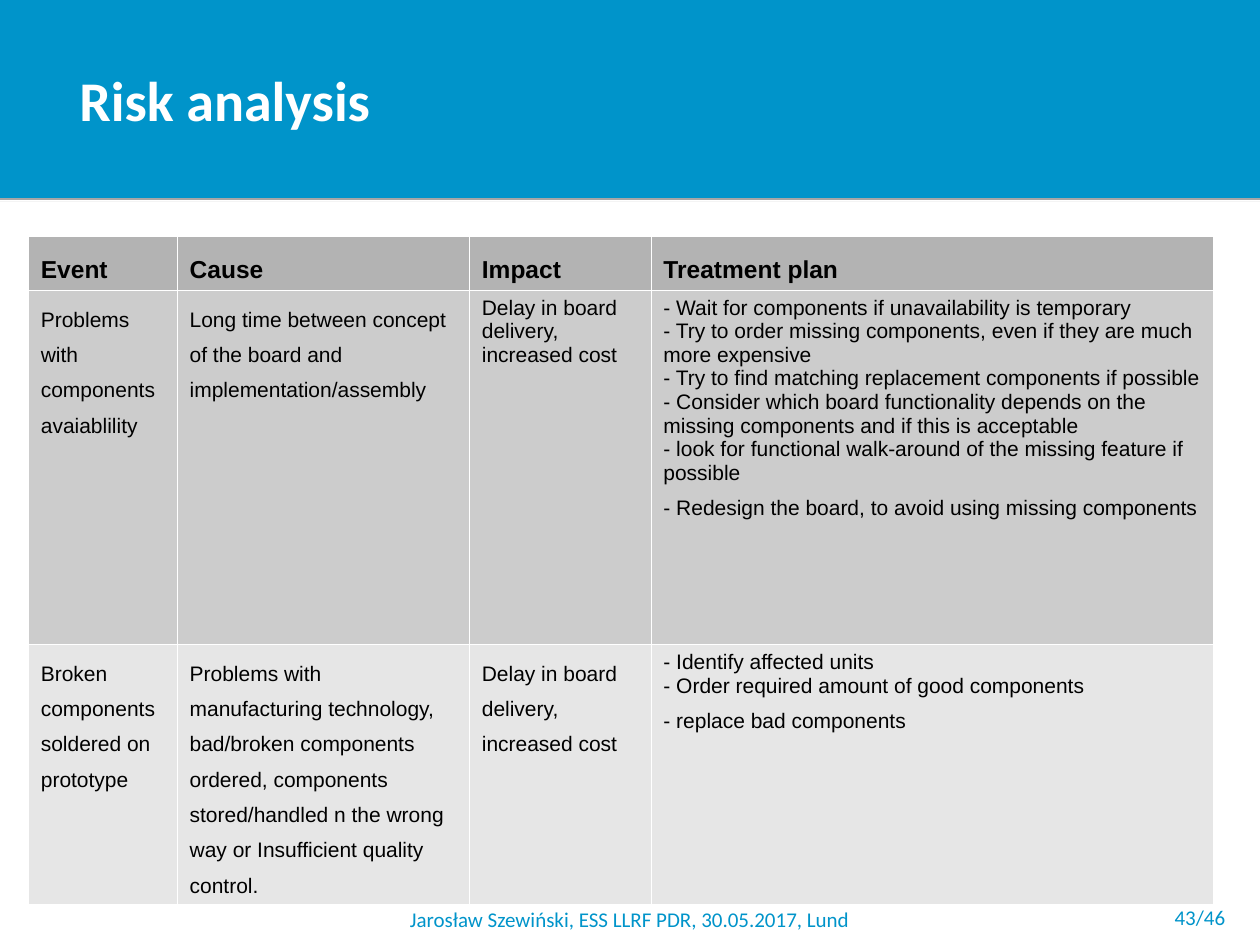
from dataclasses import dataclass

from lxml import etree
from pptx import Presentation
from pptx.dml import color
from pptx.enum import shapes, text
from pptx.oxml import ns, parse_xml
from pptx.util import Cm, Pt


@dataclass(frozen=True)
class Theme:
    accent: str = "0094CA"
    light: str = "FFFFFF"
    ink: str = "000000"
    row_fills: tuple = ("B3B3B3", "CCCCCC", "E6E6E6")
    heading_font: str = "Calibri"
    body_font: str = "Arial"
    title_size: int = 32
    header_size: int = 14
    body_size: int = 12
    border_width: float = 0.06


def rgb(value):
    return color.RGBColor.from_string(value)


class SlideBuilder:
    def __init__(self, slide, theme):
        self.slide = slide
        self.theme = theme

    def style(self, paragraph, font, size, fill, bold=False):
        for run in paragraph.runs:
            run.font.name = font
            run.font.size = Pt(size)
            run.font.bold = bold
            run.font.color.rgb = rgb(fill)

    def band(self, height):
        band = self.slide.shapes.add_shape(
            shapes.MSO_SHAPE.RECTANGLE, 0, 0, Cm(25.4), Cm(height))
        band.fill.solid()
        band.fill.fore_color.rgb = rgb(self.theme.accent)
        band.line.fill.background()
        band._element.spPr.append(parse_xml(
            f'<a:effectLst {ns.nsdecls("a")}>'
            f'<a:outerShdw blurRad="0" dist="{Pt(1.8)}" dir="5400000" rotWithShape="0">'
            f'<a:srgbClr val="{self.theme.ink}"><a:alpha val="35000"/></a:srgbClr>'
            '</a:outerShdw></a:effectLst>'))

    def rule(self, y):
        rule = self.slide.shapes.add_connector(
            shapes.MSO_CONNECTOR.STRAIGHT, 0, Cm(y), Cm(25.4), Cm(y))
        rule.line.color.rgb = rgb(self.theme.light)
        rule.line.width = Pt(0.5)
        etree.SubElement(rule._element.spPr, ns.qn("a:effectLst"))

    def title(self, wording, left, top, width, height):
        title = self.slide.shapes.title
        self.slide.shapes._spTree.append(title._element)  # in front of the band
        title.left, title.top = Cm(left), Cm(top)
        title.width, title.height = Cm(width), Cm(height)
        frame = title.text_frame
        frame.text = wording
        frame.margin_left = frame.margin_right = 0
        frame.margin_top = frame.margin_bottom = 0
        frame.vertical_anchor = text.MSO_ANCHOR.MIDDLE
        frame.paragraphs[0].alignment = text.PP_ALIGN.LEFT
        self.style(frame.paragraphs[0], self.theme.heading_font,
                   self.theme.title_size, self.theme.light, bold=True)

    def footer(self, wording, left, top, width, alignment):
        box = self.slide.shapes.add_textbox(Cm(left), Cm(top), Cm(width), Cm(0.66))
        frame = box.text_frame
        frame.word_wrap = True
        frame.text = wording
        frame.vertical_anchor = text.MSO_ANCHOR.MIDDLE
        frame.paragraphs[0].alignment = alignment
        self.style(frame.paragraphs[0], self.theme.heading_font,
                   self.theme.body_size, self.theme.accent)

    def cell_borders(self, cell):
        properties = cell._tc.get_or_add_tcPr()
        for index, side in enumerate(("lnL", "lnR", "lnT", "lnB")):
            properties.insert(index, parse_xml(
                f'<a:{side} {ns.nsdecls("a")} w="{Pt(self.theme.border_width)}">'
                f'<a:solidFill><a:srgbClr val="{self.theme.light}"/></a:solidFill>'
                f'</a:{side}>'))

    def table(self, rows, left, top, widths, heights):
        """Each cell is (lines, spacing of the last line)."""
        table = self.slide.shapes.add_table(
            len(rows), len(widths), Cm(left), Cm(top),
            Cm(sum(widths)), Cm(sum(heights))).table
        table.horz_banding = False
        for column, width in zip(table.columns, widths):
            column.width = Cm(width)
        for row, height in zip(table.rows, heights):
            row.height = Cm(height)
        for r, row in enumerate(rows):
            header = r == 0
            size = self.theme.header_size if header else self.theme.body_size
            for c, (lines, last_spacing) in enumerate(row):
                cell = table.cell(r, c)
                cell.margin_right = Cm(0.2)
                cell.fill.solid()
                cell.fill.fore_color.rgb = rgb(self.theme.row_fills[r])
                self.cell_borders(cell)
                cell.text_frame.text = "\n".join(lines)
                paragraphs = cell.text_frame.paragraphs
                for paragraph in paragraphs:
                    paragraph.line_spacing = 1.0
                    self.style(paragraph, self.theme.body_font, size,
                               self.theme.ink, header)
                paragraphs[-1].line_spacing = last_spacing


def spaced(*lines):
    return lines, 1.5


def tight(*lines):
    return lines, 1.0


RISKS = [
    [spaced("Event"), spaced("Cause"), spaced("Impact"), spaced("Treatment plan")],
    [
        spaced("Problems with components avaiablility"),
        spaced("Long time between concept of the board and implementation/assembly"),
        tight("Delay in board delivery, increased cost"),
        spaced(
            "- Wait for components if unavailability is temporary",
            "- Try to order missing components, even if they are much more expensive",
            "- Try to find matching replacement components if possible",
            "- Consider which board functionality depends on the missing components "
            "and if this is acceptable",
            "- look for functional walk-around of the missing feature if possible",
            "- Redesign the board, to avoid using missing components"),
    ],
    [
        spaced("Broken components soldered on prototype"),
        spaced("Problems with manufacturing technology, bad/broken components ordered, "
               "components stored/handled n the wrong way or Insufficient quality control."),
        spaced("Delay in board delivery, increased cost"),
        spaced(
            "- Identify affected units",
            "- Order required amount of good components",
            "- replace bad components"),
    ],
]


def main():
    deck = Presentation()
    deck.slide_width, deck.slide_height = Cm(25.4), Cm(19.05)
    builder = SlideBuilder(deck.slides.add_slide(deck.slide_layouts[5]), Theme())
    builder.band(3.99)
    builder.rule(4.04)
    builder.title("Risk analysis", 1.6, 0, 16.84, 4.01)
    builder.table(RISKS, 0.57, 4.76, widths=(3, 5.89, 3.66, 11.33),
                  heights=(1.08, 7.14, 5.22))
    builder.footer("43/46", 22.61, 18.16, 2.34, text.PP_ALIGN.RIGHT)
    builder.footer("Jarosław Szewiński, ESS LLRF PDR, 30.05.2017, Lund",
                   0.2, 18.19, 24.99, text.PP_ALIGN.CENTER)
    deck.save("out.pptx")


if __name__ == "__main__":
    main()
